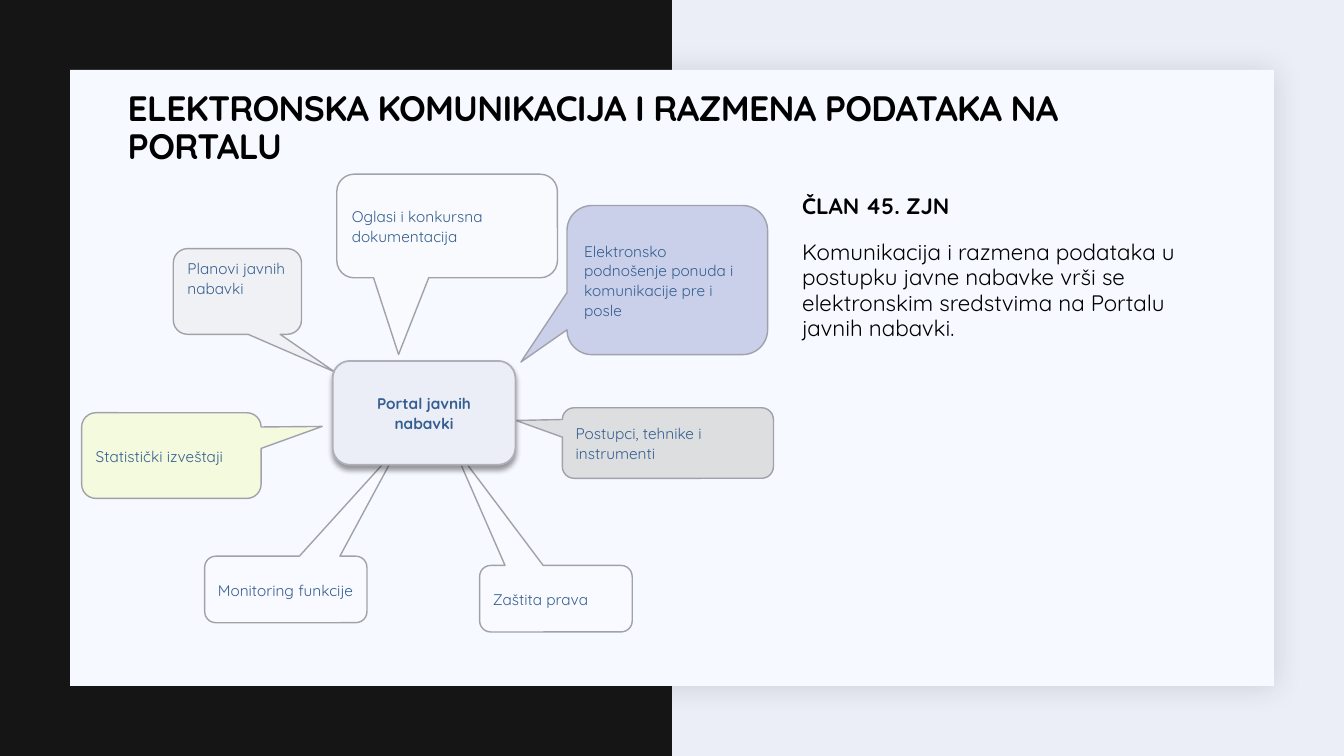
"""Build the slide on electronic communication through the procurement portal."""
from dataclasses import dataclass

from lxml import etree
from pptx import Presentation
from pptx import util as u
from pptx.dml.color import RGBColor
from pptx.enum import shapes, text
from pptx.oxml.ns import qn

Pt = u.Pt
FONT = "Quicksand"
BLACK = RGBColor(0x00, 0x00, 0x00)
INK = RGBColor(0x14, 0x15, 0x14)
MIST = RGBColor(0xEC, 0xEE, 0xF7)
PAPER = RGBColor(0xF6, 0xF9, 0xFF)
BLUE = RGBColor(0x36, 0x5F, 0x91)
OUTLINE = RGBColor(0xA1, 0xA2, 0xA9)
PORTAL_EDGE = RGBColor(0xAF, 0xB0, 0xB7)
PANEL_SHADE = RGBColor(0x1F, 0x21, 0x25)
SMOKE = RGBColor(0xEC, 0xEC, 0xEE)
SNOW = RGBColor(0xFB, 0xFC, 0xFD)
LAVENDER = RGBColor(0xB9, 0xC0, 0xE2)
GREY = RGBColor(0xCC, 0xCC, 0xCC)
FROST = RGBColor(0xFB, 0xFC, 0xFF)
LIME = RGBColor(0xF3, 0xFD, 0xB9)
WHITE = RGBColor(0xFD, 0xFE, 0xFF)


@dataclass(frozen=True)
class Box:
    left: float
    top: float
    width: float
    height: float

    def lengths(self) -> list:
        return [Pt(v) for v in (self.left, self.top, self.width, self.height)]


@dataclass(frozen=True)
class Topic:
    label: str
    box: Box
    tip: tuple[float, float]
    fill: RGBColor
    opacity: int
    bottom_inset: float = 3.6


@dataclass(frozen=True)
class Shadow:
    color: RGBColor
    opacity: int
    blur: float
    distance: float
    angle: int


TOPICS = [
    Topic("Planovi javnih nabavki", Box(123.8, 177.6, 91.6, 61.2),
          (0.76, 0.94), SMOKE, 60, 23),
    Topic("Oglasi i konkursna dokumentacija", Box(240.6, 124.4, 157.6, 74),
          (-0.22, 1.24), SNOW, 61),
    Topic("Elektronsko podnošenje ponuda i komunikacije pre i posle",
          Box(405, 146.8, 143.3, 106.5), (-0.73, 0.55), LAVENDER, 71),
    Topic("Postupci, tehnike i instrumenti", Box(401.7, 291.3, 150.8, 50.4),
          (-0.72, -0.32), GREY, 60),
    Topic("Zaštita prava", Box(342.6, 403.9, 109, 47.5),
          (-0.68, -2.32), FROST, 53),
    Topic("Statistički izveštaji", Box(58.3, 294.8, 128.2, 61.2),
          (0.84, -0.34), LIME, 48),
    Topic("Monitoring funkcije", Box(146.2, 397.3, 115.9, 47.5),
          (0.7, -2.16), WHITE, 37),
]


def add_alpha(color_parent, opacity: int) -> None:
    etree.SubElement(color_parent, qn("a:alpha"), val=str(opacity * 1000))


def add_block(slide, kind, box: Box, fill: RGBColor):
    block = slide.shapes.add_shape(kind, *box.lengths())
    block.shadow.inherit = False
    block.fill.solid()
    block.fill.fore_color.rgb = fill
    block.line.fill.background()
    return block


def set_outline(block, color: RGBColor, width: float) -> None:
    block.line.color.rgb = color
    block.line.width = Pt(width)


def cast_shadow(block, shadow: Shadow) -> None:
    effects = block.element.spPr.find(qn("a:effectLst"))
    outer = etree.SubElement(
        effects, qn("a:outerShdw"), blurRad=str(Pt(shadow.blur)),
        dist=str(Pt(shadow.distance)), dir=str(shadow.angle * 60000),
        algn="ctr", rotWithShape="0")
    color = etree.SubElement(outer, qn("a:srgbClr"), val=str(shadow.color))
    add_alpha(color, shadow.opacity)


def style_paragraph(paragraph, size: float, color: RGBColor, bold: bool,
                    spacing: float, align=text.PP_ALIGN.LEFT) -> None:
    paragraph.alignment = align
    paragraph.line_spacing = spacing
    for run in paragraph.runs:
        run.font.name = FONT
        run.font.size = Pt(size)
        run.font.bold = bold
        run.font.color.rgb = color


def write_label(block, label: str, bold: bool = False,
                align=text.PP_ALIGN.LEFT) -> None:
    frame = block.text_frame
    frame.word_wrap = True
    frame.vertical_anchor = text.MSO_ANCHOR.MIDDLE
    frame.text = label
    paragraph = frame.paragraphs[0]
    style_paragraph(paragraph, 11, BLUE, bold, 1.07, align)
    paragraph.space_after = Pt(6)


def add_topic(slide, topic: Topic) -> None:
    callout = add_block(slide, shapes.MSO_SHAPE.ROUNDED_RECTANGULAR_CALLOUT,
                        topic.box, topic.fill)
    fill = callout.element.spPr.find(qn("a:solidFill"))
    add_alpha(fill[0], topic.opacity)
    set_outline(callout, OUTLINE, 1)
    callout.adjustments[0], callout.adjustments[1] = topic.tip
    write_label(callout, topic.label)
    callout.text_frame.margin_bottom = Pt(topic.bottom_inset)


def add_portal(slide) -> None:
    portal = add_block(slide, shapes.MSO_SHAPE.ROUNDED_RECTANGLE,
                       Box(237.6, 257.8, 130.6, 74.2), MIST)
    set_outline(portal, PORTAL_EDGE, 1.25)
    cast_shadow(portal, Shadow(BLACK, 40, 4, 3, 90))
    write_label(portal, "Portal javnih nabavki", True, text.PP_ALIGN.CENTER)


def add_title(slide) -> None:
    title = slide.shapes.add_textbox(*Box(84.2, 82.8, 792, 46.1).lengths())
    frame = title.text_frame
    frame.word_wrap = True
    frame.vertical_anchor = text.MSO_ANCHOR.MIDDLE
    frame.margin_bottom = Pt(31)
    frame.margin_right = Pt(18)
    frame.text = "ELEKTRONSKA KOMUNIKACIJA I RAZMENA PODATAKA NA PORTALU"
    paragraph = frame.paragraphs[0]
    style_paragraph(paragraph, 25.2, BLACK, True, 0.9)
    paragraph.runs[0].font._element.set("spc", "-50")


def add_article(slide) -> None:
    article = slide.shapes.add_textbox(*Box(565.9, 135.4, 292.3, 321.8).lengths())
    frame = article.text_frame
    frame.word_wrap = True
    frame.margin_left, frame.margin_right = Pt(7.2), Pt(0)
    frame.text = ("ČLAN 45. ZJN\n"
                  "Komunikacija i razmena podataka u postupku javne nabavke vrši se "
                  "elektronskim sredstvima na Portalu javnih nabavki.")
    for paragraph, bold in zip(frame.paragraphs, (True, False)):
        style_paragraph(paragraph, 16, BLACK, bold, 0.95)
        paragraph.space_before, paragraph.space_after = Pt(12), Pt(2)


def main() -> None:
    deck = Presentation()
    deck.slide_width, deck.slide_height = Pt(960), Pt(540)
    slide = deck.slides.add_slide(deck.slide_layouts[6])
    slide.background.fill.solid()
    slide.background.fill.fore_color.rgb = MIST
    rectangle = shapes.MSO_SHAPE.RECTANGLE
    add_block(slide, rectangle, Box(0, 0, 480, 540), INK)
    panel = add_block(slide, rectangle, Box(50, 50, 860, 440), PAPER)
    cast_shadow(panel, Shadow(PANEL_SHADE, 15, 20, 2, 45))
    add_article(slide)
    add_title(slide)
    for topic in TOPICS:
        add_topic(slide, topic)
    add_portal(slide)
    deck.save("out.pptx")


if __name__ == "__main__":
    main()
